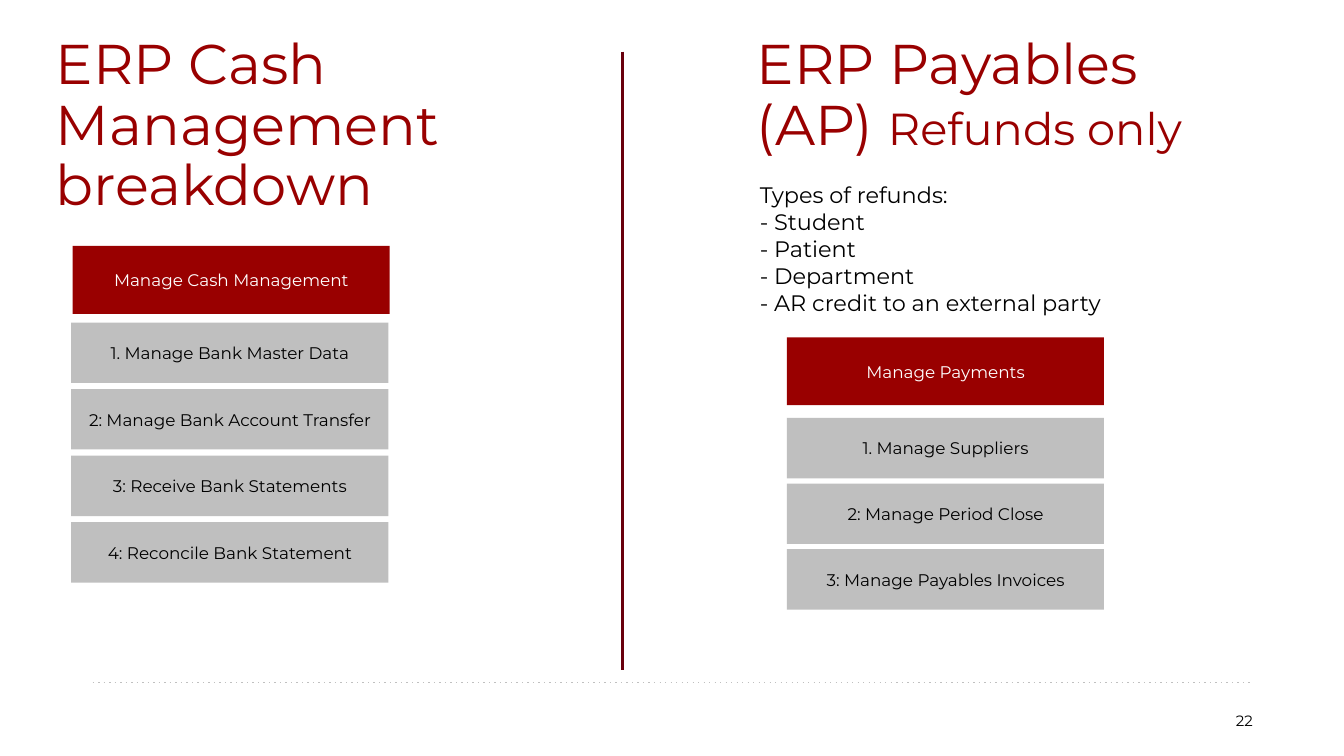
from dataclasses import dataclass

import pptx
import pptx.dml.color
import pptx.enum.dml
import pptx.enum.shapes
import pptx.enum.text
import pptx.oxml
import pptx.oxml.ns
import pptx.shapes.base
import pptx.slide
import pptx.text.text
import pptx.util

Align = pptx.enum.text.PP_ALIGN
Anchor = pptx.enum.text.MSO_ANCHOR

SLIDE_WIDTH = pptx.util.Inches(10)
SLIDE_HEIGHT = SLIDE_WIDTH * 9 // 16
GRID_COLUMNS = 100
CELL = SLIDE_WIDTH / GRID_COLUMNS

FONT = "Montserrat"
CRIMSON = "990000"
MAROON = "69000D"
SILVER = "BFBFBF"
DOT_GRAY = "C0C0C0"
WHITE = "FFFFFF"
BLACK = "000000"

CARD_WIDTH = 23.6
HEADER_HEIGHT = 5.05
STEP_HEIGHT = 4.5
TIGHT = (0.7, 0.4)
NORMAL = (1, 0.5)


@dataclass(frozen=True)
class Area:
    column: float
    row: float
    columns: float
    rows: float


@dataclass(frozen=True)
class Piece:
    text: str
    size: float


@dataclass(frozen=True)
class Stack:
    header_column: float
    header_row: float
    step_column: float
    first_step_row: float
    step_pitch: float
    header: str
    steps: tuple[str, ...]


@dataclass(frozen=True)
class Rule:
    start: tuple[float, float]
    end: tuple[float, float]
    color: str
    weight: float
    dotted: bool = False


HEADINGS = (
    (Area(3.45, 1.4, 33, 15.2), (Piece("ERP Cash Management breakdown", 30),)),
    (Area(55.6, -9.2, 34.3, 21.3),
     (Piece("ERP Payables (AP) ", 30), Piece("Refunds only", 24))),
)

REFUND_LINES = ("Types of refunds:", "- Student", "- Patient",
                "- Department", "- AR credit to an external party")

STACKS = (
    Stack(5.4, 18.3, 5.3, 24, 4.95, "Manage Cash Management", (
        "1. Manage Bank Master Data", "2: Manage Bank Account Transfer",
        "3: Receive Bank Statements", "4: Reconcile Bank Statement")),
    Stack(58.55, 25.1, 58.55, 31.1, 4.88, "Manage Payments", (
        "1. Manage Suppliers", "2: Manage Period Close",
        "3: Manage Payables Invoices")),
)

RULES = (
    Rule((6.9, 50.8), (93.2, 50.8), DOT_GRAY, 0.75, dotted=True),
    Rule((46.3, 3.85), (46.3, 49.85), MAROON, 1.5),
)


def cells(count: float) -> int:
    return round(count * CELL)


def rgb(color: str) -> pptx.dml.color.RGBColor:
    return pptx.dml.color.RGBColor.from_string(color)


def bounds(area: Area) -> tuple[int, ...]:
    return tuple(map(cells, (area.column, area.row, area.columns, area.rows)))


def style_span(span: pptx.text.text._Run, size: float, color: str) -> None:
    span.font.name = FONT
    span.font.size = pptx.util.Pt(size)
    span.font.color.rgb = rgb(color)


def prepare_frame(shape: pptx.shapes.base.BaseShape, anchor: Anchor,
                  inset: tuple[float, float]) -> pptx.text.text.TextFrame:
    frame = shape.text_frame
    frame.word_wrap = True
    frame.vertical_anchor = anchor
    frame.margin_left = frame.margin_right = cells(inset[0])
    frame.margin_top = frame.margin_bottom = cells(inset[1])
    return frame


def write_lines(frame: pptx.text.text.TextFrame, text: str, size: float,
                color: str, align: Align) -> None:
    frame.text = text
    for para in frame.paragraphs:
        para.alignment = align
        for span in para.runs:
            style_span(span, size, color)


def draw_heading(page: pptx.slide.Slide, area: Area,
                 pieces: tuple[Piece, ...]) -> None:
    box = page.shapes.add_textbox(*bounds(area))
    para = prepare_frame(box, Anchor.BOTTOM, TIGHT).paragraphs[0]
    para.line_spacing = 0.9
    para.space_after = pptx.util.Pt(4.5)
    for piece in pieces:
        span = para.add_run()
        span.text = piece.text
        style_span(span, piece.size, CRIMSON)


def draw_note(page: pptx.slide.Slide, area: Area, text: str, size: float,
              align: Align, anchor: Anchor) -> None:
    box = page.shapes.add_textbox(*bounds(area))
    write_lines(prepare_frame(box, anchor, NORMAL), text, size, BLACK, align)


def draw_card(page: pptx.slide.Slide, area: Area, text: str, fill: str,
              color: str) -> None:
    card = page.shapes.add_shape(
        pptx.enum.shapes.MSO_SHAPE.RECTANGLE, *bounds(area))
    card.shadow.inherit = False
    card.fill.solid()
    card.fill.fore_color.rgb = rgb(fill)
    card.line.fill.background()
    frame = prepare_frame(card, Anchor.MIDDLE, TIGHT)
    write_lines(frame, text, 9, color, Align.CENTER)


def draw_stack(page: pptx.slide.Slide, stack: Stack) -> None:
    header = Area(stack.header_column, stack.header_row, CARD_WIDTH,
                  HEADER_HEIGHT)
    draw_card(page, header, stack.header, CRIMSON, WHITE)
    for index, step in enumerate(stack.steps):
        row = stack.first_step_row + index * stack.step_pitch
        area = Area(stack.step_column, row, CARD_WIDTH, STEP_HEIGHT)
        draw_card(page, area, step, SILVER, BLACK)


def draw_rule(page: pptx.slide.Slide, rule: Rule) -> None:
    connector = page.shapes.add_connector(
        pptx.enum.shapes.MSO_CONNECTOR.STRAIGHT,
        *map(cells, rule.start + rule.end))
    connector.line.color.rgb = rgb(rule.color)
    connector.line.width = pptx.util.Pt(rule.weight)
    properties = connector._element.spPr
    if rule.dotted:
        connector.line.dash_style = pptx.enum.dml.MSO_LINE.ROUND_DOT
        dash = properties.find(".//" + pptx.oxml.ns.qn("a:prstDash"))
        dash.set("val", "dot")
    properties.append(pptx.oxml.parse_xml(
        f'<a:effectLst {pptx.oxml.ns.nsdecls("a")}/>'))


def main() -> None:
    deck = pptx.Presentation()
    deck.slide_width = SLIDE_WIDTH
    deck.slide_height = SLIDE_HEIGHT
    page = deck.slides.add_slide(deck.slide_layouts[6])
    for rule in RULES:
        draw_rule(page, rule)
    for area, pieces in HEADINGS:
        draw_heading(page, area, pieces)
    draw_note(page, Area(55.55, 13, 34.3, 11.1), "\n".join(REFUND_LINES), 12,
              Align.LEFT, Anchor.TOP)
    for stack in STACKS:
        draw_stack(page, stack)
    draw_note(page, Area(71.7, 52.15, 22.5, 3), "22", 8,
              Align.RIGHT, Anchor.MIDDLE)
    deck.save("out.pptx")


if __name__ == "__main__":
    main()
